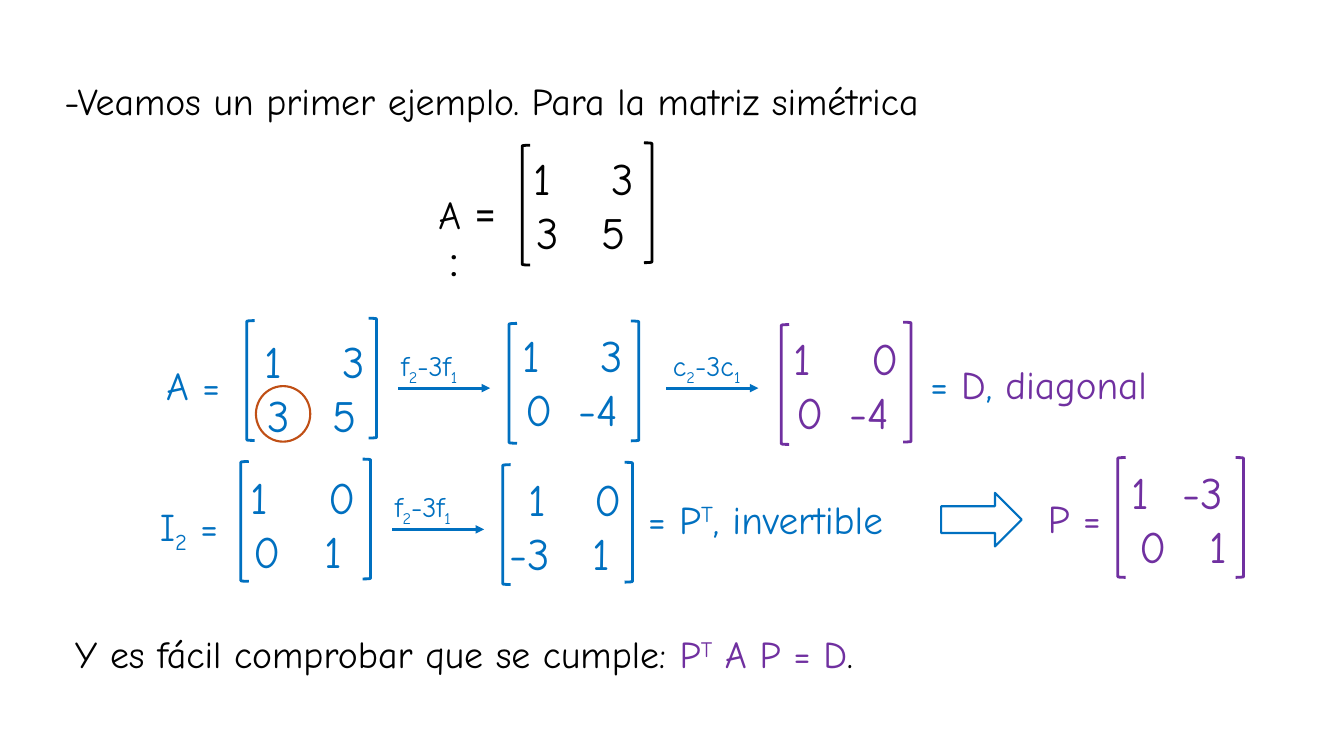
import pptx
import pptx.dml.color
import pptx.enum.shapes
import pptx.enum.text
import pptx.oxml
import pptx.oxml.ns
import pptx.util

Cm = pptx.util.Cm
Pt = pptx.util.Pt
SHAPE = pptx.enum.shapes.MSO_SHAPE
COLORS = {"black": "000000", "blue": "0070C0", "purple": "7030A0", "orange": "C04F15"}
FRAME = {
    "word_wrap": True,
    "auto_size": pptx.enum.text.MSO_AUTO_SIZE.NONE,
    "vertical_anchor": pptx.enum.text.MSO_ANCHOR.TOP,
    "margin_left": Cm(0.25),
    "margin_right": Cm(0.25),
    "margin_top": Cm(0.13),
    "margin_bottom": Cm(0.13),
}
SENTENCE = {
    "alignment": pptx.enum.text.PP_ALIGN.LEFT,
    "line_spacing": 0.9,
    "space_before": Pt(10),
}


def apply_format(target, values):
    for name, value in values.items():
        setattr(target, name, value)


def color_of(name):
    return pptx.dml.color.RGBColor.from_string(COLORS[name])


def add_element(parent, tag, **attributes):
    child = parent.makeelement(pptx.oxml.ns.qn(tag), attributes)
    parent.append(child)
    return child


class MatrixPage:
    def __init__(self, deck, font="Comic Neue"):
        self.page = deck.slides.add_slide(deck.slide_layouts[1])
        self.font = font

    def add_spans(self, para, spans, size, stops=()):
        if stops:
            tabs = add_element(para._p.get_or_add_pPr(), "a:tabLst")
            for stop in stops:
                add_element(tabs, "a:tab", pos=str(int(Cm(stop))), algn="l")
        for words, color, *extra in spans:
            span = para.add_run()
            span.text = words
            font = extra[1] if len(extra) > 1 else self.font
            apply_format(span.font, {"size": Pt(size), "name": font, "bold": False})
            span.font.color.rgb = color_of(color)
            if extra and extra[0]:
                span._r.get_or_add_rPr().set("baseline", str(extra[0] * 1000))

    def sentence(self, index, top, spans, indent=0, stops=()):
        box = self.page.placeholders[index]
        place = {"left": Cm(1.37), "top": Cm(top), "width": Cm(31.75), "height": Cm(3)}
        apply_format(box, place)
        apply_format(box.text_frame, {**FRAME, "margin_left": Cm(0.25 + indent)})
        para = box.text_frame.paragraphs[0]
        apply_format(para, SENTENCE)
        properties = para._p.get_or_add_pPr()
        properties.set("marL", "0")
        properties.set("indent", "0")
        add_element(properties, "a:buNone")
        self.add_spans(para, spans, 27, stops)

    def text(self, left, top, width, height, lines, size):
        box = self.page.shapes.add_textbox(Cm(left), Cm(top), Cm(width), Cm(height))
        frame = box.text_frame
        apply_format(frame, FRAME)
        for number, (spans, stops) in enumerate(lines):
            para = frame.add_paragraph() if number else frame.paragraphs[0]
            self.add_spans(para, spans, size, stops)

    def label(self, left, top, width, *spans):
        self.text(left, top, width, 1.45, [(spans, ())], 28)

    def outline(self, kind, left, top, width, height, color, weight):
        shape = self.page.shapes.add_shape(kind, Cm(left), Cm(top), Cm(width), Cm(height))
        shape.shadow.inherit = False
        shape.fill.background()
        shape.line.color.rgb = color_of(color)
        shape.line.width = Pt(weight)

    def matrix(self, text_at, bracket_at, rows, color, gap=3.07, rise=0.06):
        left, top = bracket_at
        self.outline(SHAPE.LEFT_BRACKET, left, top, 0.2, 3.02, color, 2)
        self.outline(SHAPE.RIGHT_BRACKET, left + gap, top - rise, 0.2, 3.02, color, 2)
        lines = []
        for first_stop, first, second_stop, second in rows:
            lead = "\t" if first_stop else ""
            stops = [stop for stop in (first_stop, second_stop) if stop]
            lines.append(([(f"{lead}{first}\t{second}", color)], stops))
        self.text(*text_at, 6.91, 4.37, lines, 32)

    def step(self, left, top, label_left, letter):
        arrow = self.page.shapes.add_connector(
            pptx.enum.shapes.MSO_CONNECTOR.STRAIGHT, Cm(left), Cm(top), Cm(left + 2.32), Cm(top)
        )
        arrow.line.color.rgb = color_of("blue")
        arrow.line.width = Pt(2)
        add_element(arrow.line._get_or_add_ln(), "a:tailEnd", type="triangle")
        add_element(arrow._element.spPr, "a:effectLst")
        spans = [(letter, "blue"), ("2", "blue", -25), (f"-3{letter}", "blue"), ("1", "blue", -25)]
        self.text(label_left, top - 1.14, 2.62, 1.11, [(spans, ())], 20)


def main():
    deck = pptx.Presentation()
    apply_format(deck, {"slide_width": Cm(33.87), "slide_height": Cm(19.05)})
    page = MatrixPage(deck)

    page.sentence(0, 1.96, [("-Veamos un primer ejemplo. Para la matriz simétrica", "black")])
    definition = [
        ([("A ", "black"), ("=", "black", 0, "Roboto")], ()),
        ([("\t:", "black", 0, "Roboto")], (0.27,)),
    ]
    page.text(10.8, 4.67, 2.2, 2.7, definition, 28)

    symmetric = [(0.24, "1", 2.21, "3"), (0.32, "3", 1.97, "5")]
    reduced = [(0.24, "1", 2.21, "3"), (0.32, "0", 1.65, "-4")]
    diagonal = [(0.24, "1", 2.21, "0"), (0.32, "0", 1.65, "-4")]
    identity = [(0.24, "1", 2.21, "0"), (0.32, "0", 2.12, "1")]
    transposed = [(0.48, "1", 2.13, "0"), (0, "-3", 2.09, "1")]
    passage = [(0.48, "1", 1.76, "-3"), (0.68, "0", 2.45, "1")]

    page.matrix((12.95, 3.68), (13.16, 3.66), symmetric, "black")
    page.label(3.94, 8.97, 2.2, ("A =", "blue"))
    page.matrix((6.17, 8.28), (6.22, 8.08), symmetric, "blue")
    page.outline(SHAPE.OVAL, 6.45, 9.73, 1.37, 1.4, "orange", 1.5)
    page.step(10.03, 9.78, 9.86, "f")
    page.matrix((12.67, 8.13), (12.83, 8.15), reduced, "blue")
    page.step(16.79, 9.78, 16.71, "c")
    page.matrix((19.51, 8.2), (19.69, 8.18), diagonal, "purple")
    page.label(23.19, 8.94, 6.65, ("= ", "blue"), ("D", "purple"), (", ", "blue"), ("diagonal", "purple"))

    page.label(3.78, 12.52, 2.3, ("I", "blue"), ("2", "blue", -25), (" =", "blue"))
    page.matrix((5.82, 11.71), (6.07, 11.63), identity, "blue")
    page.step(9.88, 13.34, 9.7, "f")
    page.matrix((12.6, 11.76), (12.67, 11.71), transposed, "blue")
    page.label(16.08, 12.34, 7.87, ("= P", "blue"), ("T", "blue", 30), (", invertible", "blue"))
    page.outline(SHAPE.RIGHT_ARROW, 23.72, 12.42, 2.03, 1.35, "blue", 1.5)
    page.label(26.16, 12.32, 2.1, ("P =", "purple"))
    page.matrix((27.79, 11.58), (28.17, 11.53), passage, "purple", gap=2.97, rise=0)

    conclusion = [
        ("Y es fácil comprobar que se cumple:\t", "black"),
        ("P", "purple"),
        ("T", "purple", 30),
        (" A P = D", "purple"),
        (".", "black"),
    ]
    page.sentence(1, 15.9, conclusion, indent=0.27, stops=(15.86,))
    deck.save("out.pptx")


if __name__ == "__main__":
    main()
